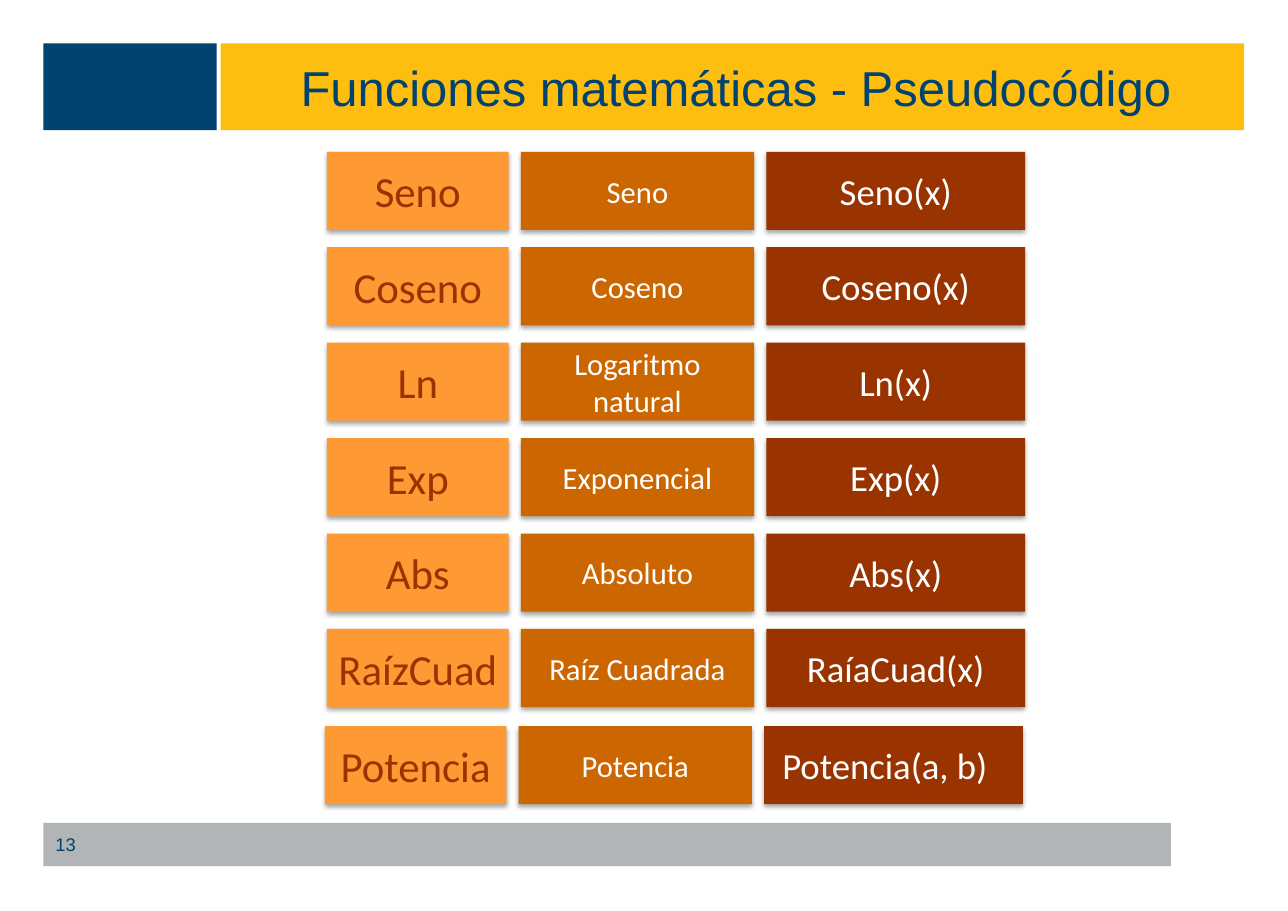
"""Build a slide that lists mathematical functions in pseudocode."""
from lxml.etree import SubElement
from pptx import Presentation
from pptx.dml.color import RGBColor
from pptx.enum.shapes import MSO_SHAPE
from pptx.enum.text import MSO_ANCHOR, PP_ALIGN
from pptx.oxml.ns import qn
from pptx.util import Cm, Pt

NAVY = RGBColor(0x00, 0x42, 0x70)
YELLOW = RGBColor(0xFE, 0xBE, 0x10)
GRAY = RGBColor(0xB2, 0xB5, 0xB6)
ORANGE = RGBColor(0xFF, 0x99, 0x33)
AMBER = RGBColor(0xCC, 0x66, 0x00)
RUST = RGBColor(0x99, 0x33, 0x00)
WHITE = RGBColor(0xFF, 0xFF, 0xFF)

COLS = [
    (4.19, ORANGE, 28, RUST),
    (5.38, AMBER, 20, WHITE),
    (5.97, RUST, 24, WHITE),
]
ROWS = [
    ("Seno", "Seno", "Seno(x)"),
    ("Coseno", "Coseno", "Coseno(x)"),
    ("Ln", "Logaritmo natural", "Ln(x)"),
    ("Exp", "Exponencial", "Exp(x)"),
    ("Abs", "Absoluto", "Abs(x)"),
    ("RaízCuad", "Raíz Cuadrada", "RaíaCuad(x)"),
    ("Potencia", "Potencia", "Potencia(a, b)"),
]
LEFT, TOP, STEP, GAP, HIGH = 7.54, 3.5, 2.2, 0.28, 1.8
LAST_LEFT, LAST_TOP = 7.49, 16.74


def add_bar(slide, left, top, width, height, color):
    bar = slide.shapes.add_shape(
        MSO_SHAPE.RECTANGLE, Cm(left), Cm(top), Cm(width), Cm(height))
    bar.shadow.inherit = False
    bar.fill.solid()
    bar.fill.fore_color.rgb = color
    bar.line.fill.background()
    return bar


def write(shape, text, size, color, face, align=PP_ALIGN.LEFT, inset=0.28):
    frame = shape.text_frame
    frame.text = text
    frame.word_wrap = True
    frame.vertical_anchor = MSO_ANCHOR.MIDDLE
    frame.margin_left = frame.margin_right = Cm(inset)
    frame.margin_top = frame.margin_bottom = Cm(0.13)
    line = frame.paragraphs[0]
    line.alignment = align
    line.font.size = Pt(size)
    line.font.name = face
    line.font.color.rgb = color


def add_shadow(shape):
    effects = shape.element.spPr.find(qn("a:effectLst"))
    shadow = SubElement(
        effects, qn("a:outerShdw"), blurRad=str(Pt(3.1)), dist=str(Pt(1.8)),
        dir="5400000", rotWithShape="0")
    color = SubElement(shadow, qn("a:srgbClr"), val="000000")
    SubElement(color, qn("a:alpha"), val="35000")


def add_row(slide, left, top, words):
    cells = []
    for word, (width, fill, size, color) in zip(words, COLS):
        cell = add_bar(slide, left, top, width, HIGH, fill)
        add_shadow(cell)
        write(cell, word, size, color, "Calibri", PP_ALIGN.CENTER, 0.2)
        cells.append(cell)
        left += width + GAP
    return cells


def add_title(slide, text):
    title = slide.shapes.title
    title.left, title.top = Cm(6.65), Cm(1)
    title.width, title.height = Cm(22.04), Cm(2)
    write(title, text, 32, NAVY, "Arial")
    title.element.getparent().append(title.element)


def add_number(slide, text):
    box = slide.shapes.add_textbox(Cm(1), Cm(18.97), Cm(6.93), Cm(1))
    write(box, text, 12, NAVY, "Arial")


def main():
    deck = Presentation()
    deck.slide_width, deck.slide_height = Cm(29.7), Cm(21)
    slide = deck.slides.add_slide(deck.slide_layouts[5])
    add_bar(slide, 1, 18.97, 26, 1, GRAY)
    add_bar(slide, 1, 1, 4, 2, NAVY)
    add_bar(slide, 5.09, 1, 23.6, 2, YELLOW)
    add_title(slide, "Funciones matemáticas - Pseudocódigo")
    add_number(slide, "13")
    for index, words in enumerate(ROWS[:-1]):
        add_row(slide, LEFT, TOP + index * STEP, words)
    power = add_row(slide, LAST_LEFT, LAST_TOP, ROWS[-1])[-1]
    power.text_frame.margin_right = Cm(0.6)
    deck.save("out.pptx")


if __name__ == "__main__":
    main()
